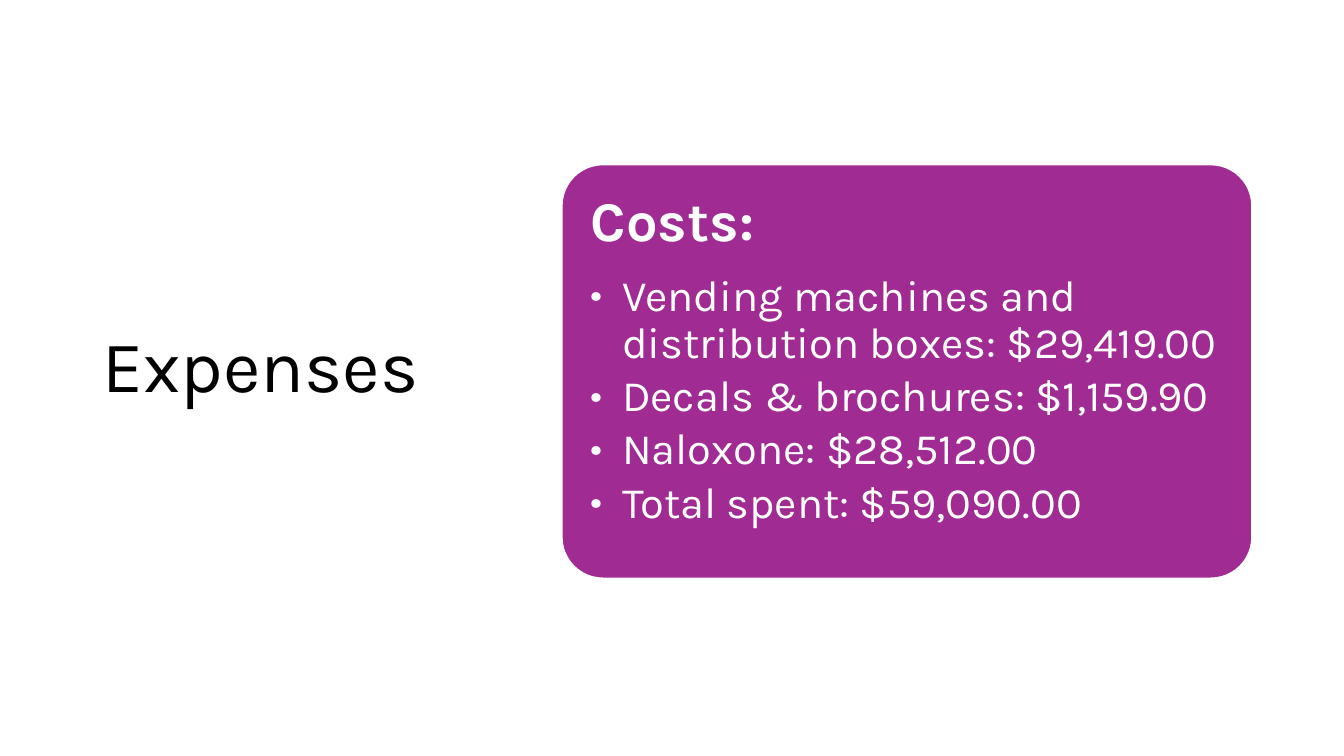
from lxml import etree
from pptx import Presentation
from pptx import util as u
from pptx.dml.color import RGBColor
from pptx.enum import shapes, text
from pptx.oxml.ns import qn

COLORS = {"title": "000000", "card": "A02B93", "white": "FFFFFF"}
FONT = "Karla"
COSTS = [
    "Vending machines and distribution boxes: $29,419.00",
    "Decals & brochures: $1,159.90",
    "Naloxone: $28,512.00",
    "Total spent: $59,090.00",
]


def add_line(paragraph, words, size, color, bold=False, space_after=0):
    paragraph.alignment = text.PP_ALIGN.LEFT
    paragraph.line_spacing = 0.9
    paragraph.space_after = u.Pt(space_after)
    run = paragraph.add_run()
    run.text = words
    run.font.name = FONT
    run.font.size = u.Pt(size)
    run.font.bold = bold
    run.font.color.rgb = RGBColor.from_string(COLORS[color])


presentation = Presentation()
presentation.slide_width = u.Inches(13.33)
presentation.slide_height = u.Inches(7.5)
slide = presentation.slides.add_slide(presentation.slide_layouts[6])

title = slide.shapes.add_textbox(
    u.Inches(0.92), u.Inches(0.61), u.Inches(3.69), u.Inches(6.09)
)
title.text_frame.word_wrap = True
title.text_frame.vertical_anchor = text.MSO_ANCHOR.MIDDLE
add_line(title.text_frame.paragraphs[0], "Expenses", 52, "title")

card = slide.shapes.add_shape(
    shapes.MSO_SHAPE.ROUNDED_RECTANGLE,
    u.Inches(5.57), u.Inches(1.63), u.Inches(6.85), u.Inches(4.11),
)
card.adjustments[0] = 0.1
card.shadow.inherit = False
card.fill.solid()
card.fill.fore_color.rgb = RGBColor.from_string(COLORS["card"])
card.line.color.rgb = RGBColor.from_string(COLORS["white"])
card.line.width = u.Pt(1.5)

frame = card.text_frame
frame.word_wrap = True
frame.vertical_anchor = text.MSO_ANCHOR.TOP
frame.margin_left = frame.margin_right = u.Inches(0.17)
frame.margin_top = frame.margin_bottom = u.Inches(0.17)
add_line(frame.paragraphs[0], "Costs:", 40, "white", bold=True, space_after=14)

for cost in COSTS:
    paragraph = frame.add_paragraph()
    paragraph.level = 1
    properties = paragraph._p.get_or_add_pPr()
    properties.set("marL", str(u.Inches(0.31)))
    properties.set("indent", str(-u.Inches(0.31)))
    etree.SubElement(properties, qn("a:buFont")).set("typeface", FONT)
    etree.SubElement(properties, qn("a:buChar")).set("char", "•")
    add_line(paragraph, cost, 31, "white", space_after=4.65)

presentation.save("out.pptx")
